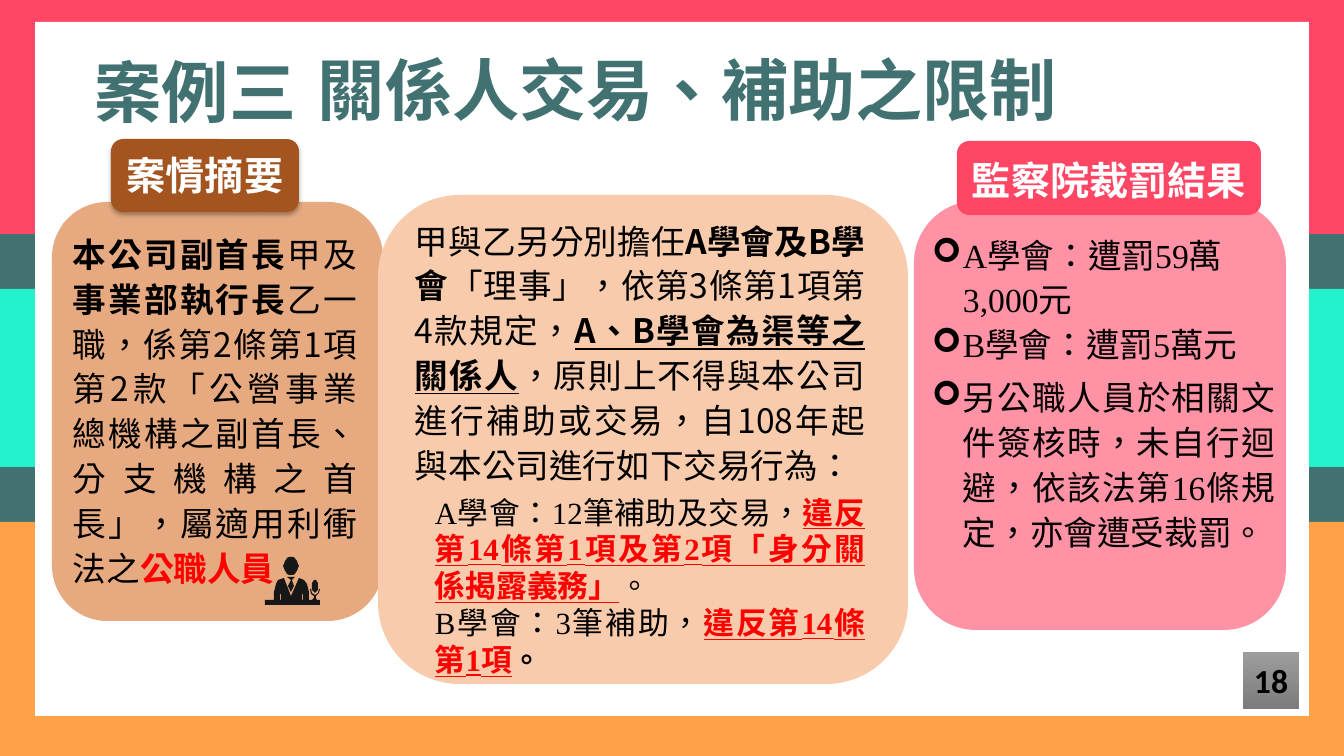
from math import cos, pi, sin

from lxml import etree
from pptx import Presentation
from pptx.dml.color import RGBColor
from pptx.enum.shapes import MSO_SHAPE
from pptx.enum.text import MSO_ANCHOR, PP_ALIGN
from pptx.oxml.ns import qn
from pptx.util import Pt

EMU_PER_PX = 12192000 / 1344
RECT, ROUND = MSO_SHAPE.RECTANGLE, MSO_SHAPE.ROUNDED_RECTANGLE
TOP, MIDDLE = MSO_ANCHOR.TOP, MSO_ANCHOR.MIDDLE
CENTER, JUSTIFY, LEFT = PP_ALIGN.CENTER, PP_ALIGN.JUSTIFY, PP_ALIGN.LEFT
SANS, SERIF, NUMBER = "Noto Sans CJK SC", "Times New Roman", "Calibri"

WHITE = RGBColor(0xFF, 0xFF, 0xFF)
BLACK = RGBColor(0, 0, 0)
RED = RGBColor(0xFF, 0, 0)
TEAL = RGBColor(0x42, 0x71, 0x72)
MINT = RGBColor(0x22, 0xF2, 0xCC)
ROSE = RGBColor(0xFF, 0x46, 0x64)
ORANGE = RGBColor(0xFF, 0xA1, 0x46)
TAN = RGBColor(0xE7, 0xAA, 0x80)
PEACH = RGBColor(0xF8, 0xCB, 0xAD)
PINK = RGBColor(0xFF, 0x93, 0xA5)
BROWN = RGBColor(0xA3, 0x54, 0x1F)
INK = RGBColor(0x18, 0x17, 0x17)
GREY_LIGHT = RGBColor(0x9D, 0x9D, 0x9D)
GREY_DARK = RGBColor(0x7C, 0x7C, 0x7C)

PLAIN = dict(size=24, name=SANS, color=BLACK, bold=False)
BOLD = dict(PLAIN, bold=True)
BOLD_RED = dict(BOLD, color=RED)
BOLD_LINE = dict(BOLD, underline=True)
SERIF_24 = dict(PLAIN, name=SERIF)
SERIF_22 = dict(SERIF_24, size=22)
SERIF_BOLD = dict(SERIF_22, bold=True)
SERIF_RED = dict(SERIF_BOLD, color=RED, underline=True)
TITLE = dict(size=48, name=SANS, color=TEAL, bold=True)
HEADING = dict(size=28, name=SANS, color=WHITE, bold=True)
PAGE = dict(size=24, name=NUMBER, color=BLACK, bold=True)


def px(n):
    return round(n * EMU_PER_PX)


def add_box(slide, box, fill=None, kind=RECT):
    sp = slide.shapes.add_shape(kind, *map(px, box))
    sp.shadow.inherit = False
    sp.line.fill.background()
    if fill is None:
        sp.fill.background()
    else:
        sp.fill.solid()
        sp.fill.fore_color.rgb = fill
    return sp


def add_run(p, text, style):
    r = p.add_run()
    r.text = text
    for key, value in style.items():
        if key == "color":
            r.font.color.rgb = value
        else:
            setattr(r.font, key, Pt(value) if key == "size" else value)
    rPr = r._r.get_or_add_rPr()
    rPr.set("lang", "zh-TW")
    rPr.set("altLang", "en-US")
    etree.SubElement(rPr, qn("a:ea"), typeface=SANS)


def para(*runs, align=JUSTIFY, line=None, before=0, left=0, bullet=None):
    return dict(runs=runs, align=align, line=line, before=before, left=left, bullet=bullet)


def write(sp, paragraphs, anchor=MIDDLE, inset=(10, 5, 10, 5), wrap=True):
    tf = sp.text_frame
    sides = ("margin_left", "margin_top", "margin_right", "margin_bottom")
    settings = dict(zip(sides, map(px, inset)), word_wrap=wrap, vertical_anchor=anchor)
    for key, value in settings.items():
        setattr(tf, key, value)
    for i, item in enumerate(paragraphs):
        p = tf.add_paragraph() if i else tf.paragraphs[0]
        p.alignment = item["align"]
        p.space_before = Pt(item["before"])
        if item["line"]:
            p.line_spacing = Pt(item["line"])
        pPr = p._p.get_or_add_pPr()
        pPr.set("marL", str(px(item["left"])))
        pPr.set("indent", str(-px(item["left"]) if item["bullet"] else 0))
        pPr.set("hangingPunct", "0")
        if item["bullet"]:
            etree.SubElement(pPr, qn("a:buFont"), typeface="Wingdings", charset="2")
            etree.SubElement(pPr, qn("a:buChar"), char=item["bullet"])
        for text, style in item["runs"]:
            add_run(p, text, style)


def add_frame(slide, w, h):
    band = 234
    add_box(slide, (0, 0, w, h), TEAL)
    add_box(slide, (0, 289, w, 178), MINT)
    add_box(slide, (0, 0, w, band), ROSE)
    add_box(slide, (0, h - band, w, band), ORANGE)
    add_box(slide, (35, 22, w - 70, h - 62), WHITE)


def add_title(slide, x, y):
    topic = slide.shapes.add_textbox(*map(px, (x + 225, y - 2, 826, 92)))
    write(topic, [para(("關係人交易、補助之限制", TITLE), align=LEFT)], TOP)
    case = slide.shapes.add_textbox(*map(px, (x, y, 225, 85)))
    write(case, [para(("案例三", TITLE), align=CENTER)], TOP, wrap=False)


def add_heading(slide, box, text, fill, anchor):
    sp = add_box(slide, box, fill, ROUND)
    write(sp, [para((text, HEADING), align=CENTER, line=36)], anchor)
    return sp


def add_soft_shadow(sp):
    effects = sp._element.spPr.find(qn("a:effectLst"))
    shadow = etree.SubElement(effects, qn("a:outerShdw"))
    for key, value in dict(blurRad=Pt(3.5), dist=Pt(2.2), dir=5400000).items():
        shadow.set(key, str(int(value)))
    color = etree.SubElement(shadow, qn("a:srgbClr"), val="000000")
    etree.SubElement(color, qn("a:alpha"), val="32000")


def add_summary(slide, x, y, w, h):
    add_box(slide, (x, y, w, h), TAN, ROUND)
    write(add_box(slide, (x + 11, y + 21, 304, 371), TAN), [para(
        ("本公司副首長", BOLD), ("甲及", PLAIN), ("事業部執行長", BOLD),
        ("乙一職，係第2條第1項第2款「公營事業總機構之副首長、分支機構之首長」，屬適用利衝法之", PLAIN),
        ("公職人員", BOLD_RED), ("。", PLAIN), line=32)], inset=(10,) * 4)


def add_dealings(slide, x, y, w, h):
    add_box(slide, (x, y, w, h), PEACH, ROUND)
    write(add_box(slide, (x + 27, y + 103, 470, 338), PEACH), [
        para(("甲與乙另分別擔任", PLAIN), ("A學會及B學會", BOLD),
             ("「理事」，依第3條第1項第4款規定，", PLAIN),
             ("A、B學會為渠等之關係人", BOLD_LINE),
             ("，原則上不得與本公司進行補助或交易，自108年起與本公司進行如下交易行為：", PLAIN),
             line=32),
        para(("A學會：12筆補助及交易，", SERIF_22),
             ("違反第14條第1項及第2項「身分關係揭露義務」", SERIF_RED),
             ("。", SERIF_22), before=6, left=20),
        para(("B學會：3筆補助，", SERIF_22), ("違反第14條第1項", SERIF_RED),
             ("。", SERIF_BOLD), left=20),
    ], inset=(10, 10, 10, 50))


def add_penalties(slide, x, y, w, h):
    add_box(slide, (x, y, w, h), PINK, ROUND)
    item = dict(line=32, left=31, bullet="➢")
    write(add_box(slide, (x + 8, y + 77, 363, 316)), [
        para(("A學會：遭罰59萬3,000元", SERIF_24), align=LEFT, before=6, **item),
        para(("B學會：遭罰5萬元", SERIF_24), align=LEFT, **item),
        para(("另公職人", SERIF_24), ("員於相關文件簽核時，未自行迴避，依該法第", PLAIN),
             ("16", SERIF_24), ("條規定，亦會遭受裁罰。", PLAIN), before=6, **item),
    ], inset=(10, 10, 10, 100))


def add_speaker(slide, x, y):
    turns = [2 * pi * i / 24 for i in range(24)]
    head = [(round(26 + 7.5 * cos(t), 1), round(9 + 9 * sin(t), 1)) for t in turns]
    body = [(0, 48), (0, 43), (9, 43), (9, 35), (11, 27), (13, 23), (19, 21), (26, 39),
            (34, 21), (39, 23), (42, 27), (44, 35), (44, 43), (55, 43), (55, 48)]
    tie = [(22, 20), (26, 23), (23, 29), (26, 35), (29, 29), (27, 23), (30, 20)]
    sleeves = [[(s, 43), (s, 37), (s + 1, 37), (s + 1, 43)] for s in (15, 37)]
    mic = [(47, 26), (49, 23), (51, 23), (53, 26), (53, 33), (50, 36), (47, 33)]
    stand = [(45, 32), (46, 32), (47, 36), (50, 38), (53, 36), (54, 32), (55, 32), (54, 36),
             (51, 39), (51, 41), (52, 43), (47, 43), (49, 41), (49, 39), (46, 37)]
    builder = slide.shapes.build_freeform(*head[0], scale=EMU_PER_PX)
    for i, outline in enumerate([head, body, tie, *sleeves, mic, stand]):
        if i:
            builder.move_to(*outline[0])
        builder.add_line_segments(outline[1:], close=True)
    sp = builder.convert_to_shape(px(x), px(y))
    sp.shadow.inherit = False
    sp.fill.solid()
    sp.fill.fore_color.rgb = INK
    sp.line.fill.background()


def add_page_number(slide, box):
    sp = add_box(slide, box)
    sp.fill.gradient()
    sp.fill.gradient_angle = 270
    for stop, color in zip(sp.fill.gradient_stops, (GREY_LIGHT, GREY_DARK)):
        stop.color.rgb = color
    write(sp, [para(("18", PAGE), align=CENTER)])


def main():
    prs = Presentation()
    prs.slide_width, prs.slide_height = px(1344), px(756)
    slide = prs.slides.add_slide(prs.slide_layouts[6])
    add_frame(slide, 1344, 756)
    add_title(slide, 83, 45)
    add_summary(slide, 52, 202, 331, 419)
    add_dealings(slide, 378, 195, 530, 489)
    add_penalties(slide, 914, 201, 372, 429)
    add_soft_shadow(add_heading(slide, (111, 139, 188, 73), "案情摘要", BROWN, TOP))
    add_heading(slide, (957, 141, 304, 74), "監察院裁罰結果", ROSE, MIDDLE)
    add_speaker(slide, 265, 557)
    add_page_number(slide, (1243, 652, 56, 57))
    prs.save("out.pptx")


if __name__ == "__main__":
    main()
